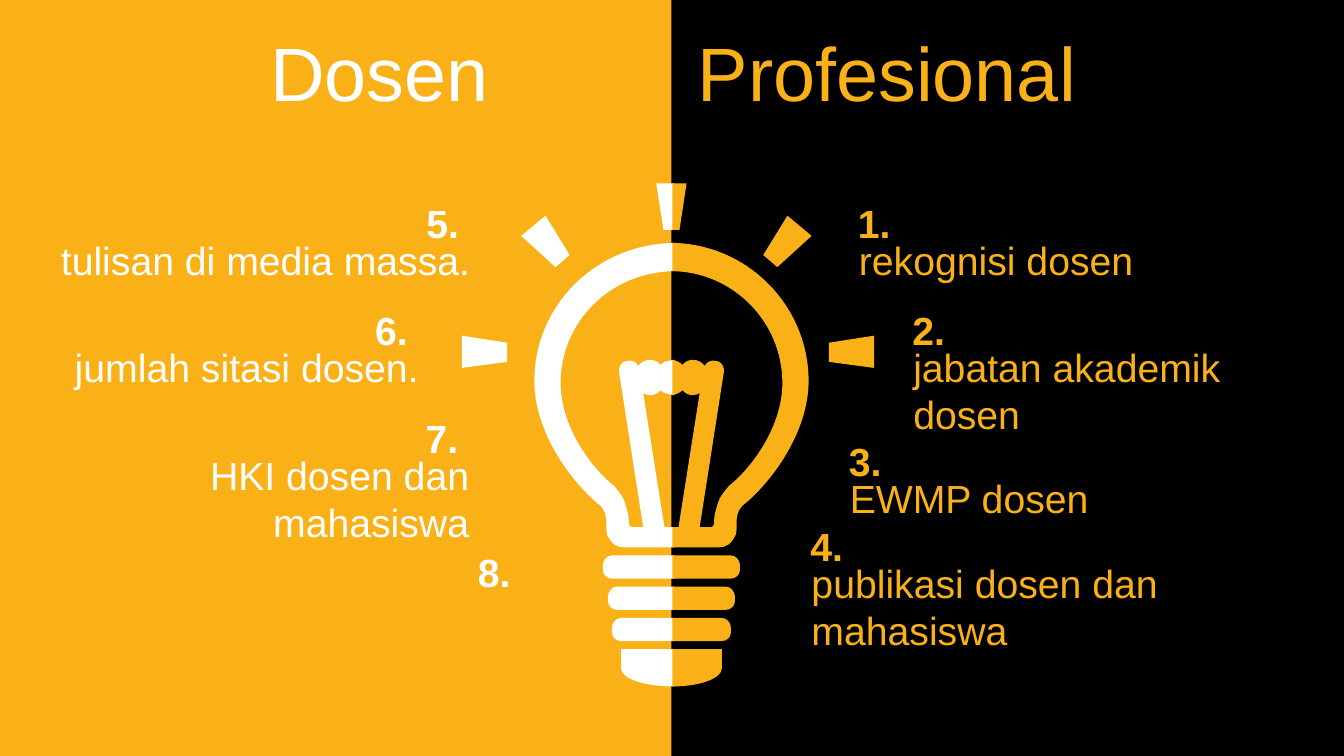
from lxml import etree
from pptx import Presentation
from pptx.dml.color import RGBColor
from pptx.enum.shapes import MSO_SHAPE
from pptx.enum.text import MSO_ANCHOR, MSO_AUTO_SIZE, PP_ALIGN
from pptx.oxml.ns import qn
from pptx.util import Pt

PX = 9144
WIDTH, HEIGHT = 1333, 750
SEAM = 667
FONT = "Arial"
AMBER = RGBColor(0xFA, 0xB1, 0x17)
WHITE = RGBColor(0xFF, 0xFF, 0xFF)
BLACK = RGBColor(0x00, 0x00, 0x00)
RECT = MSO_SHAPE.RECTANGLE
TOP, MIDDLE = MSO_ANCHOR.TOP, MSO_ANCHOR.MIDDLE
GROW, FIXED = MSO_AUTO_SIZE.SHAPE_TO_FIT_TEXT, MSO_AUTO_SIZE.NONE
LEFT, RIGHT = PP_ALIGN.LEFT, PP_ALIGN.RIGHT


def ring(wide, top):
    return [
        (0, top), (wide - 9, top),
        (wide - 4, top, wide, top + 5, wide, top + 10), (wide, top + 14),
        (wide, top + 19, wide - 4, top + 23, wide - 9, top + 23), (0, top + 23),
    ]


BASE = [(0, 644), (49, 644), (49, 663), (49, 673, 27, 681, 0, 681)]
RINGS = [ring(58, 613), ring(62, 582), ring(67, 551)]
GLASS = [
    (0, 241), (74, 242, 135, 303, 135, 378),
    (135, 429, 98, 479, 69, 502), (61, 512, 65, 517, 63, 530),
    (58, 540, 54, 543, 45, 543), (0, 543), (0, 523), (6, 523),
    (27, 390), (25, 391, 23, 392, 20, 392), (16, 392, 12, 390, 10, 387),
    (7, 390, 4, 391, 0, 392), (0, 357), (4, 358, 7, 359, 10, 362),
    (12, 359, 16, 357, 20, 357), (25, 357, 29, 359, 32, 363),
    (34, 359, 38, 357, 43, 358), (48, 358, 52, 364, 51, 369),
    (27, 523), (34, 523), (44, 523, 40, 522, 42, 510),
    (46, 495, 46, 494, 56, 482), (80, 463, 109, 422, 109, 380),
    (109, 320, 61, 270, 0, 269),
]
BEAM = [(0, 182), (14, 182), (7, 228), (0, 228)]
SIDE = [(200, 333), (200, 365), (155, 359), (155, 340)]
SLANT = [(114, 214), (138, 234), (104, 265), (90, 253)]

NOTES = [
    ("1.", "rekognisi dosen", 841, 193, 386, 1),
    ("2.", "jabatan akademik dosen", 895, 299, 385, 2),
    ("3.", "EWMP dosen", 832, 429, 384, 1),
    ("4.", "publikasi dosen dan mahasiswa", 794, 513, 386, 2),
    ("5. ", "tulisan di media massa.", 0, 193, 476, 2),
    ("6. ", "jumlah sitasi dosen.", 41, 299, 384, 1),
    ("7. ", "HKI dosen dan mahasiswa", 26, 406, 449, 2),
    ("8. ", "", 121, 539, 406, 1),
]


def shift(outline, gap):
    return [(x + gap, y) for x, y in outline]


class Deck:
    def __init__(self):
        self.deck = Presentation()
        self.deck.slide_width = WIDTH * PX
        self.deck.slide_height = HEIGHT * PX
        self.slide = self.deck.slides.add_slide(self.deck.slide_layouts[5])
        self.shapes = self.slide.shapes
        self.slide.background.fill.solid()
        self.slide.background.fill.fore_color.rgb = BLACK

    def paint(self, shape, color):
        shape.shadow.inherit = False
        shape.fill.solid()
        shape.fill.fore_color.rgb = color
        shape.line.fill.background()

    def panel(self, x, y, w, h, color):
        box = (n * PX for n in (x, y, w, h))
        self.paint(self.shapes.add_shape(RECT, *box), color)

    def half(self, outlines, axis, side, seam, color):
        pen = None
        for outline in outlines:
            points = [
                ((axis + side * x if x else seam) * PX, y * PX)
                for step in outline
                for x, y in zip(step[::2], step[1::2])
            ]
            if pen is None:
                pen = self.shapes.build_freeform(*points[0])
            else:
                pen.move_to(*points[0])
            pen.add_line_segments(points[1:], close=True)
        shape = pen.convert_to_shape()
        self.bend(shape, outlines)
        self.paint(shape, color)

    def bend(self, shape, outlines):
        lines = shape._element.iter(qn("a:lnTo"))
        lines = iter(list(lines))
        for outline in outlines:
            for step in outline[1:]:
                line = next(lines)
                if len(step) == 6:
                    line.addprevious(curve := etree.Element(qn("a:cubicBezTo")))
                    for knot in (line, next(lines), next(lines)):
                        curve.append(knot[0])
                        knot.getparent().remove(knot)

    def text(self, group, words, x, y, w, h, color, align, anchor, bold=False):
        box = group.shapes.add_textbox(x * PX, y * PX, w * PX, h * PX)
        frame = box.text_frame
        frame.word_wrap = True
        frame.auto_size = GROW
        frame.vertical_anchor = anchor
        line = frame.paragraphs[0]
        line.text = words
        line.alignment = align
        line.font.name = FONT
        line.font.size = Pt(28)
        line.font.bold = bold
        line.font.color.rgb = color

    def note(self, mark, words, x, y, w, rows):
        color, align = (AMBER, LEFT) if x > SEAM else (WHITE, RIGHT)
        group = self.shapes.add_group_shape()
        self.text(group, mark, x, y, w, 57, color, align, MIDDLE, True)
        if words:
            tall = 57 + 47 * (rows - 1)
            self.text(group, words, x + 1, y + 37, w - 1, tall, color, align, TOP)

    def title(self, x, y, w, h, inset, stop, words):
        title = self.shapes.title
        title.left, title.top, title.width, title.height = (
            n * PX for n in (x, y, w, h)
        )
        frame = title.text_frame
        frame.auto_size = FIXED
        frame.word_wrap = True
        frame.vertical_anchor = MIDDLE
        frame.margin_left = inset * PX
        line = frame.paragraphs[0]
        line.alignment = LEFT
        line.line_spacing = 0.9
        line.space_before = Pt(10)
        tabs = etree.SubElement(line._p.get_or_add_pPr(), qn("a:tabLst"))
        etree.SubElement(tabs, qn("a:tab"), pos=str(stop * PX), algn="l")
        line.font.name = FONT
        line.font.size = Pt(54)
        for word, color in words:
            run = line.add_run()
            run.text = word
            run.font.color.rgb = color
        self.shapes._spTree.append(title._element)

    def save(self):
        self.deck.save("out.pptx")


def main():
    deck = Deck()
    deck.panel(0, 0, 666, HEIGHT, AMBER)
    bulb = [BASE, *RINGS, GLASS, BEAM]
    wide = [shift(SIDE, 7), shift(SLANT, 10)]
    deck.half(bulb + wide, SEAM - 2, -1, SEAM + 2, WHITE)
    deck.half(bulb + [SIDE, SLANT], SEAM, 1, SEAM, AMBER)
    for note in NOTES:
        deck.note(*note)
    deck.title(35, 37, 1266, 79, 233, 424, [("Dosen\t", WHITE), ("Profesional", AMBER)])
    deck.save()


if __name__ == "__main__":
    main()
